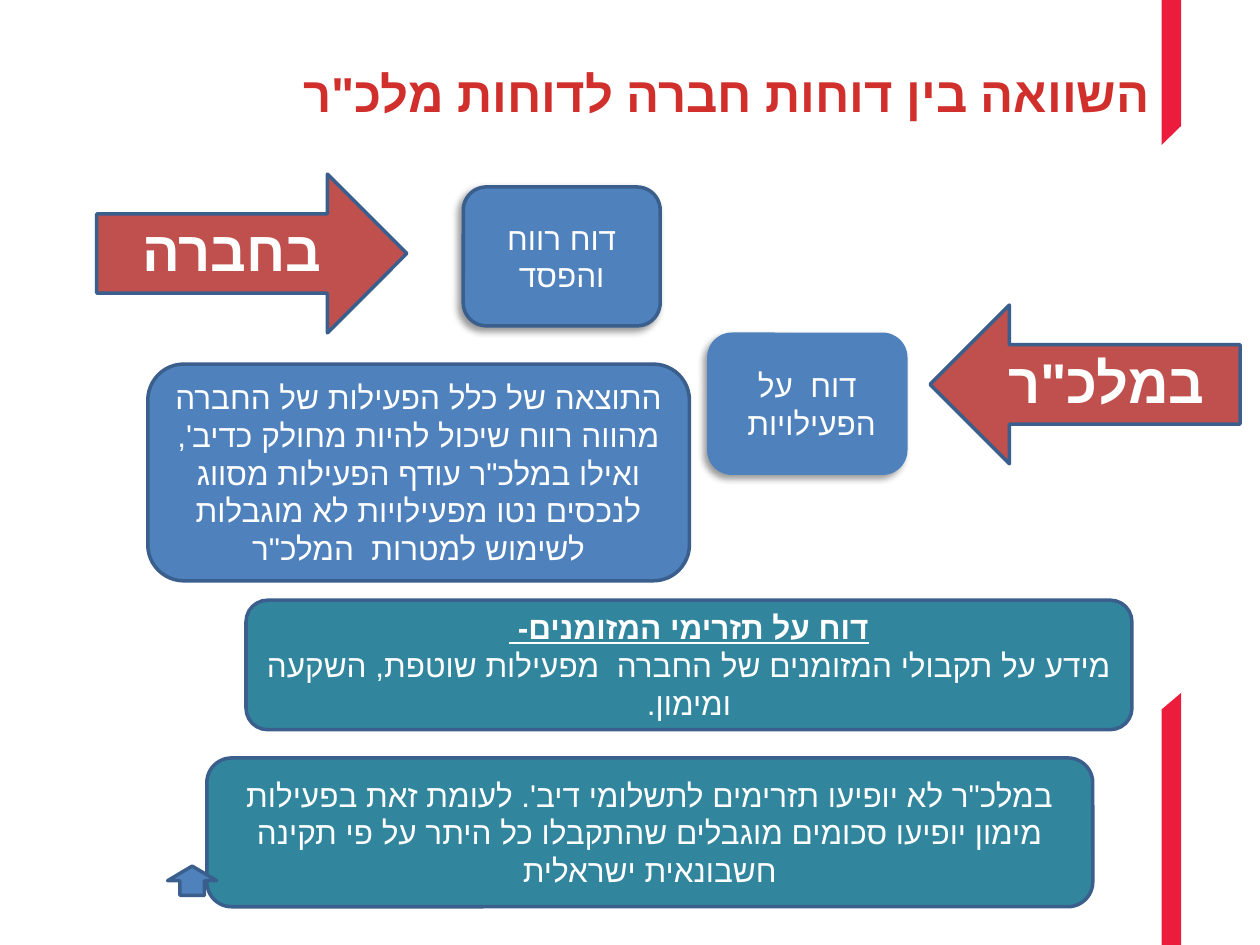
from lxml import etree
from pptx import Presentation
from pptx.dml.color import RGBColor
from pptx.enum.shapes import MSO_SHAPE
from pptx.enum.text import MSO_ANCHOR, PP_ALIGN
from pptx.oxml import parse_xml
from pptx.oxml.ns import nsdecls, qn
from pptx.util import Cm, Pt

ROUND, LEFT, UP = MSO_SHAPE.ROUNDED_RECTANGLE, MSO_SHAPE.LEFT_ARROW, MSO_SHAPE.UP_ARROW
CENTER, RIGHT = PP_ALIGN.CENTER, PP_ALIGN.RIGHT
MIDDLE = MSO_ANCHOR.MIDDLE

THEME = {
    "bar": RGBColor(0xEC, 0x1C, 0x3C),
    "title": RGBColor(0xD0, 0x2F, 0x2C),
    "red": RGBColor(0xC0, 0x50, 0x4D),
    "blue": RGBColor(0x4F, 0x81, 0xBD),
    "teal": RGBColor(0x31, 0x85, 0x9C),
    "edge": RGBColor(0x3A, 0x5F, 0x8C),
    "white": RGBColor(0xFF, 0xFF, 0xFF),
    "title_size": Pt(28), "label_size": Pt(32), "body_size": Pt(18),
    "title_font": "Roboto", "body_font": "Calibri", "hebrew_font": "Arial",
}

SHADOW = (f'<a:effectLst {nsdecls("a")}><a:outerShdw blurRad="50800" dist="38100" '
          'dir="8100000" algn="tr" rotWithShape="0"><a:srgbClr val="000000">'
          '<a:alpha val="40000"/></a:srgbClr></a:outerShdw></a:effectLst>')


def add_rtl_text(p, text, size, color="white", font="body_font", align=CENTER, bold=False):
    """Add one right-to-left run to a paragraph."""
    p.alignment = align
    p._p.get_or_add_pPr().set("rtl", "1")
    r = p.add_run()
    r.text = text
    r.font.size, r.font.bold = THEME[size], bold
    r.font.color.rgb = THEME[color]
    r.font.name = THEME[font]
    cs = etree.SubElement(r._r.get_or_add_rPr(), qn("a:cs"))
    cs.set("typeface", THEME["hebrew_font"])
    return r


def add_block(kind, box, fill, edge="edge"):
    """Add a filled, outlined preset shape without a shadow."""
    sp = s.shapes.add_shape(kind, *map(Cm, box))
    sp.shadow.inherit = False
    sp.fill.solid()
    sp.fill.fore_color.rgb = THEME[fill]
    sp.line.color.rgb = THEME[edge]
    sp.line.width = Pt(2)
    sp.text_frame.word_wrap = True
    sp.text_frame.vertical_anchor = MIDDLE
    return sp


prs = Presentation()
prs.slide_width, prs.slide_height = Cm(25.4), Cm(19.05)
s = prs.slides.add_slide(prs.slide_layouts[6])

# Red bars on the right edge: slide edge, then slanted left and right ends
bar_left, bar_right = Cm(23.42), Cm(23.81)
for edge_y, left_y, right_y in [(19.05, 14.3, 13.97), (0, 2.92, 2.54)]:
    fb = s.shapes.build_freeform(bar_right, Cm(right_y))
    fb.add_line_segments([(bar_right, Cm(edge_y)), (bar_left, Cm(edge_y)),
                          (bar_left, Cm(left_y))], close=True)
    sp = fb.convert_to_shape()
    sp.shadow.inherit = False
    sp.fill.solid()
    sp.fill.fore_color.rgb = THEME["bar"]
    sp.line.fill.background()

# Title
tf = s.shapes.add_textbox(Cm(0.25), Cm(0.91), Cm(23.17), Cm(1.91)).text_frame
tf.word_wrap = True
tf.vertical_anchor = MIDDLE
add_rtl_text(tf.paragraphs[0], 'השוואה בין דוחות חברה לדוחות מלכ"ר', "title_size",
             "title", "title_font", RIGHT, True)

# Labelled arrows
for x, y, rotation, text_x, text_y, text in [
    (18.75, 6.15, 0, 19.37, 6.55, 'במלכ"ר '),
    (1.95, 3.51, 180, 1.9, 3.89, "בחברה"),
]:
    add_block(LEFT, (x, y, 6.25, 3.2), "red").rotation = rotation
    tf = s.shapes.add_textbox(Cm(text_x), Cm(text_y), Cm(5.56), Cm(2.44)).text_frame
    tf.word_wrap = True
    tf.vertical_anchor = MIDDLE
    tf.margin_left = tf.margin_right = tf.margin_top = tf.margin_bottom = Cm(0.15)
    p = tf.paragraphs[0]
    p.line_spacing = 0.9
    add_rtl_text(p, text, "label_size", bold=True)

# Report names, with shadow
for x, y, edge, text in [
    (9.34, 3.77, "edge", "דוח רווח והפסד"),
    (14.29, 6.74, "blue", "דוח  על הפעילויות "),
]:
    sp = add_block(ROUND, (x, y, 3.97, 2.8), "blue", edge)
    spPr = sp._element.spPr
    spPr.replace(spPr.find(qn("a:effectLst")), parse_xml(SHADOW))
    add_rtl_text(sp.text_frame.paragraphs[0], text, "body_size")

# Cash flow report
tf = add_block(ROUND, (4.96, 12.1, 17.86, 2.61), "teal").text_frame
r = add_rtl_text(tf.paragraphs[0], "דוח על תזרימי המזומנים- ", "body_size", bold=True)
r.font.underline = True
add_rtl_text(tf.add_paragraph(),
             "מידע על תקבולי המזומנים של החברה  מפעילות שוטפת, השקעה ומימון.", "body_size")

# Explanations
for box, fill, text in [
    ((2.98, 7.34, 10.92, 4.37), "blue",
     "התוצאה של כלל הפעילות של החברה מהווה רווח שיכול להיות מחולק כדיב', "
     'ואילו במלכ"ר עודף הפעילות מסווג לנכסים נטו מפעילויות לא מוגבלות '
     'לשימוש למטרות  המלכ"ר'),
    ((4.17, 15.28, 17.86, 3), "teal",
     "במלכ\"ר לא יופיעו תזרימים לתשלומי דיב'. לעומת זאת בפעילות "
     "מימון יופיעו סכומים מוגבלים שהתקבלו כל היתר על פי תקינה חשבונאית ישראלית"),
]:
    sp = add_block(ROUND, box, fill)
    add_rtl_text(sp.text_frame.paragraphs[0], text, "body_size")

# Small up arrow
add_block(UP, (3.38, 17.46, 0.99, 0.59), "blue")

prs.save("out.pptx")
